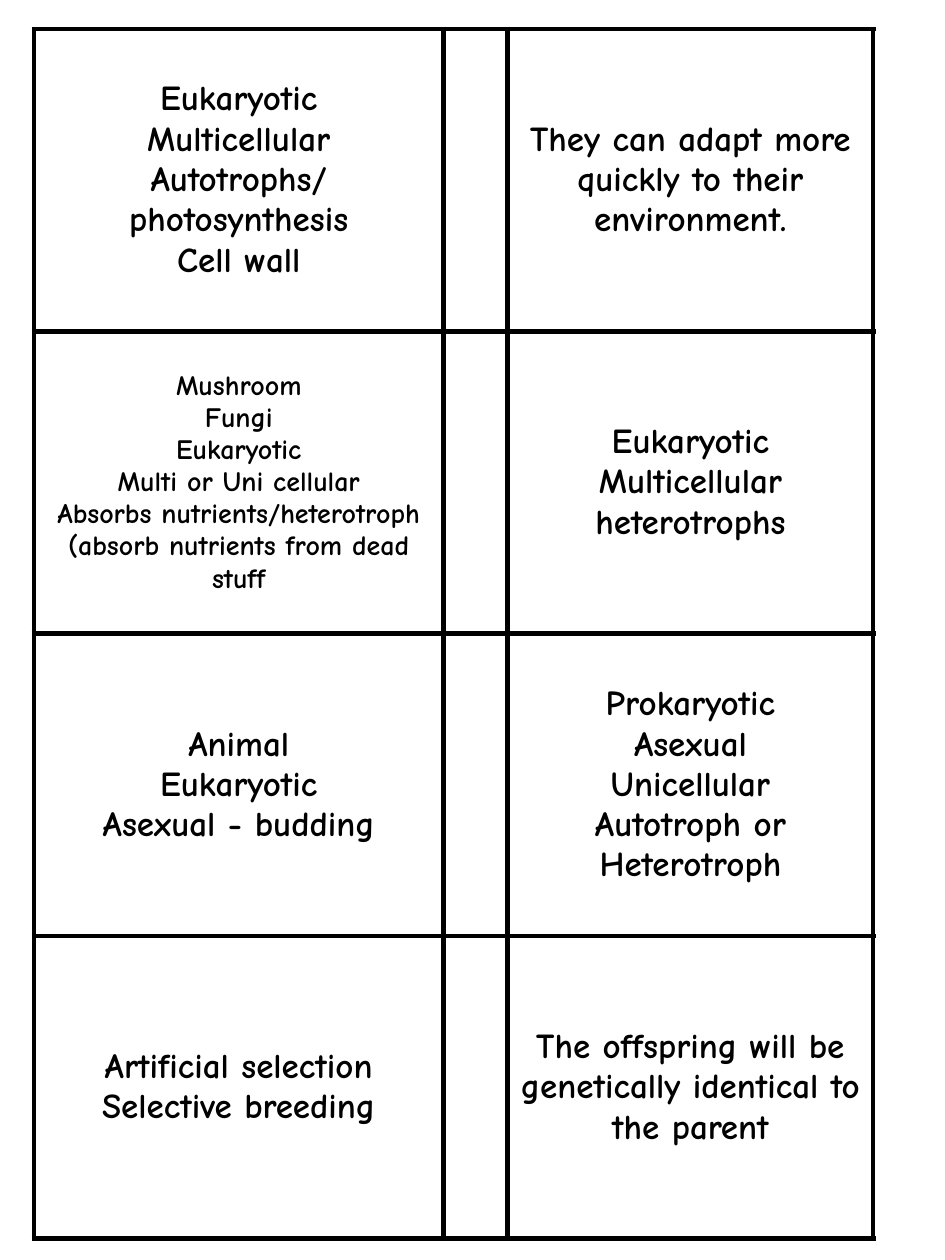
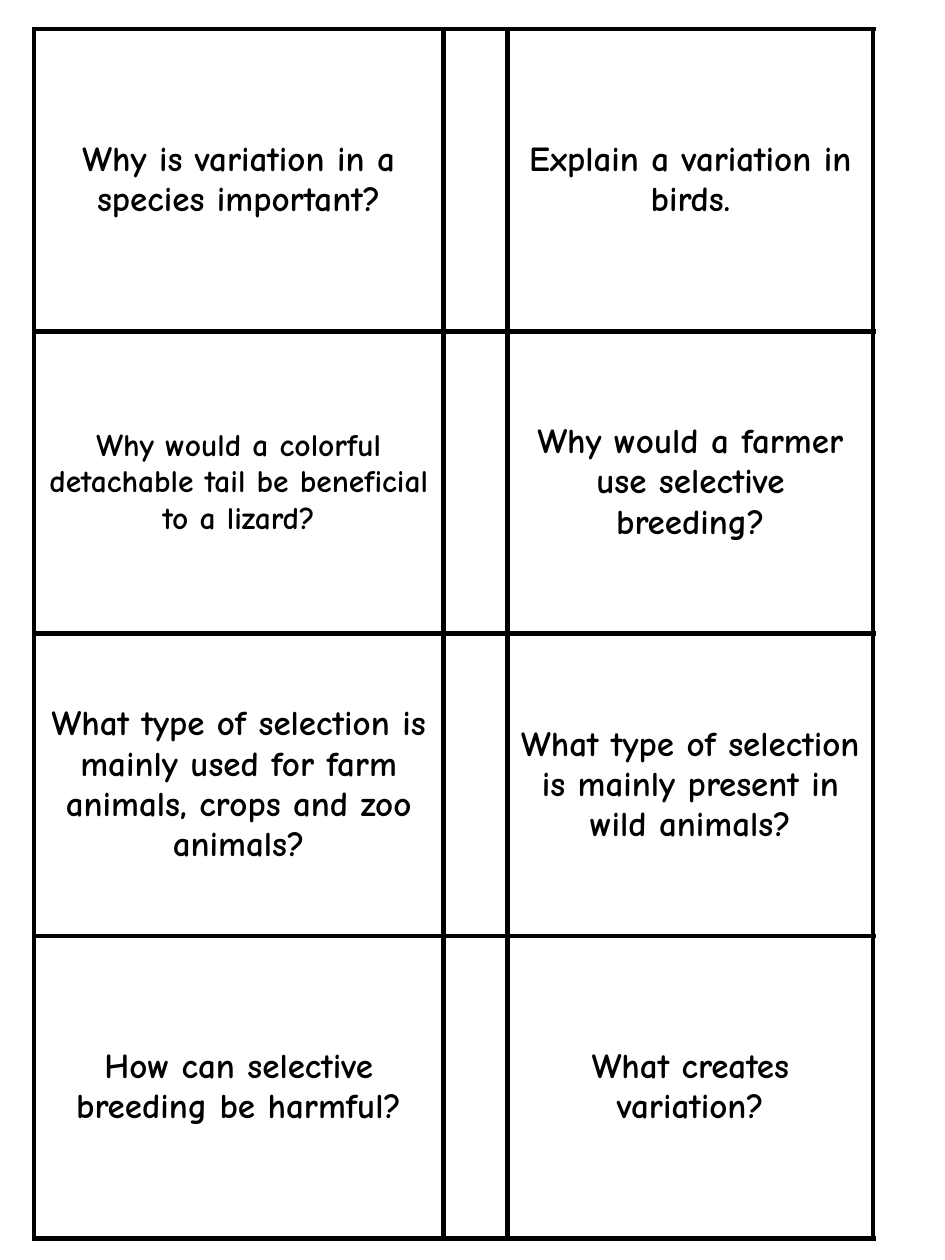
from dataclasses import dataclass

from lxml.etree import SubElement
from pptx import Presentation
from pptx.dml.color import RGBColor
from pptx.enum.text import MSO_ANCHOR, PP_ALIGN
from pptx.oxml.ns import qn
from pptx.slide import Slide
from pptx.table import _Cell as Cell
from pptx.util import Emu, Pt

SCALE = 9144  # EMU per px, 100 px to the inch
INK = "000000"
LEFT, TOP = 27, 23
COLS = (325, 51, 290)
ROW = 240
RULE = Pt(3)
FONT = {"name": "Comic Neue", "bold": True}
FLAGS = ("first_row", "horz_banding")


@dataclass(frozen=True)
class Card:
    lines: tuple[str, ...]
    size: int = 20


def card(*lines: str, size: int = 20) -> Card:
    return Card(lines, size)


# Each row holds a left and a right card; the gutter column stays empty.
ANSWERS = (
    (card("Eukaryotic", "Multicellular", "Autotrophs/photosynthesis", "Cell wall"),
     card("They can adapt more quickly to their environment.")),
    (card("Mushroom", "Fungi", "Eukaryotic", "Multi or Uni cellular",
          "Absorbs nutrients/heterotroph (absorb nutrients from dead stuff", size=16),
     card("Eukaryotic", "Multicellular", "heterotrophs")),
    (card("Animal", "Eukaryotic", "Asexual - budding"),
     card("Prokaryotic", "Asexual", "Unicellular", "Autotroph or Heterotroph")),
    (card("Artificial selection", "Selective breeding"),
     card("The offspring will be genetically identical to the parent")),
)
PROMPTS = (
    (card("Why is variation in a species important?"),
     card("Explain a variation in birds.")),
    (card("Why would a colorful detachable tail be beneficial to a lizard?", size=18),
     card("Why would a farmer use selective breeding?")),
    (card("What type of selection is mainly used for farm animals, crops and zoo animals?"),
     card("What type of selection is mainly present in wild animals?")),
    (card("How can selective breeding be harmful?"),
     card("What creates variation?")),
)


def px(count: int) -> Emu:
    return Emu(count * SCALE)


def hue(code: str) -> RGBColor:
    return RGBColor.from_string(code)


def frame(cell: Cell) -> None:
    """Rule all four sides of a cell and leave it unfilled."""
    props = cell._tc.get_or_add_tcPr()
    for side in ("lnL", "lnR", "lnT", "lnB"):
        line = SubElement(props, qn(f"a:{side}"), w=str(RULE))
        fill = SubElement(line, qn("a:solidFill"))
        SubElement(fill, qn("a:srgbClr"), val=INK)
    cell.fill.background()


def write(cell: Cell, item: Card) -> None:
    cell.vertical_anchor = MSO_ANCHOR.MIDDLE
    cell.text = "\n".join(item.lines)
    for para in cell.text_frame.paragraphs:
        para.alignment = PP_ALIGN.CENTER
        font = para.runs[0].font
        for key, value in {**FONT, "size": Pt(item.size)}.items():
            setattr(font, key, value)
        font.color.rgb = hue(INK)


def draw(slide: Slide, cards: tuple[tuple[Card, Card], ...]) -> None:
    count = len(cards)
    table = slide.shapes.add_table(
        count, len(COLS), px(LEFT), px(TOP), px(sum(COLS)), px(ROW * count)).table
    for flag in FLAGS:
        setattr(table, flag, False)
    for col, width in zip(table.columns, COLS):
        col.width = px(width)
    for row in table.rows:
        row.height = px(ROW)
    for cell in table.iter_cells():
        frame(cell)
    for index, (left, right) in enumerate(cards):
        write(table.cell(index, 0), left)
        write(table.cell(index, 2), right)


def main() -> None:
    deck = Presentation()
    deck.slide_width, deck.slide_height = px(750), px(1000)
    blank = deck.slide_layouts[6]
    for cards in (ANSWERS, PROMPTS):
        draw(deck.slides.add_slide(blank), cards)
    deck.save("out.pptx")


if __name__ == "__main__":
    main()
